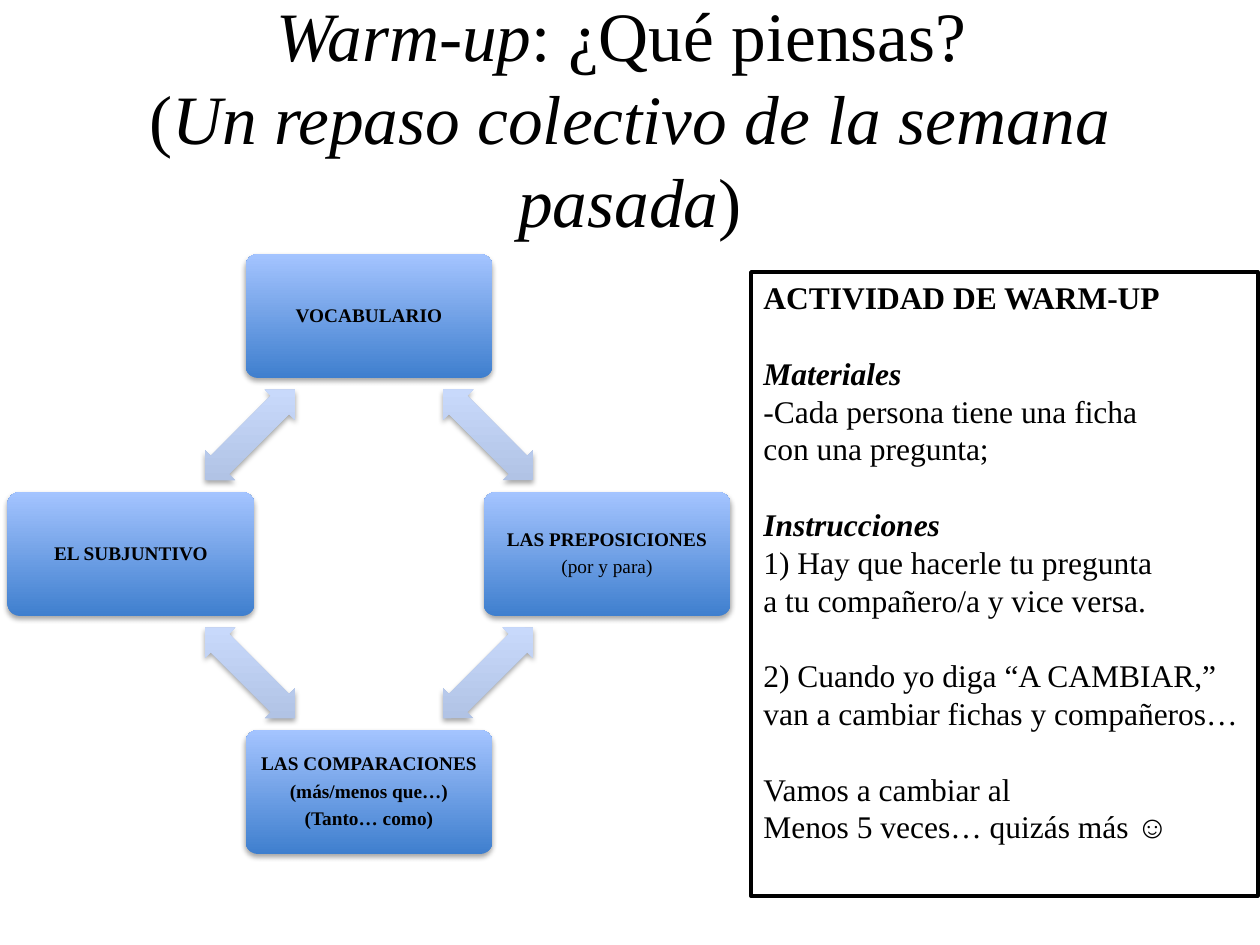
from dataclasses import dataclass

from lxml.etree import SubElement
from pptx import Presentation
from pptx.dml.color import RGBColor
from pptx.enum.shapes import MSO_SHAPE
from pptx.enum.text import MSO_ANCHOR, PP_ALIGN
from pptx.oxml.ns import qn
from pptx.util import Emu, Pt

EMU_PER_PX = 914400 / 126


@dataclass(frozen=True)
class Theme:
    font: str = "Times New Roman"
    ink: str = "000000"
    paper: str = "FFFFFF"
    card: tuple = ("3F7FCE", "A4C4FF")
    arrow: tuple = ("ADBFE1", "CCDDFF")
    title_size: float = 39.6
    card_size: float = 11
    activity_size: float = 18
    activity_gap: float = 21.6


THEME = Theme()

TITLE_LINES = [
    [("Warm-up", True), (": ¿Qué piensas? ", False)],
    [("(", False), ("Un repaso colectivo de la semana pasada", True), (")", False)],
]

CYCLE_CENTER = (369, 554)
CYCLE_RADIUS = 238
CARD_SIZE = (247, 124)
ARROW_SIZE = (128, 43)

TOPICS = [
    ((0, -1), [("VOCABULARIO", True)]),
    ((1, 0), [("LAS PREPOSICIONES", True), ("(por y para)", False)]),
    ((0, 1), [("LAS COMPARACIONES", True), ("(más/menos que…)", True),
              ("(Tanto… como)", True)]),
    ((-1, 0), [("EL SUBJUNTIVO", True)]),
]

ACTIVITY = [
    [("ACTIVIDAD DE WARM-UP", True, False)],
    [("Materiales", True, True),
     ("-Cada persona tiene una ficha", False, False),
     ("con una pregunta;", False, False)],
    [("Instrucciones", True, True),
     ("1) Hay que hacerle tu pregunta", False, False),
     ("a tu compañero/a y vice versa.", False, False)],
    [("2) Cuando yo diga “A CAMBIAR,”", False, False),
     ("van a cambiar fichas y compañeros…", False, False)],
    [("Vamos a cambiar al", False, False),
     ("Menos 5 veces… quizás más ☺", False, False)],
]


def px(length):
    return Emu(round(length * EMU_PER_PX))


def box(left, top, width, height):
    return px(left), px(top), px(width), px(height)


def centered_box(center, size):
    return box(center[0] - size[0] / 2, center[1] - size[1] / 2, *size)


def color(value):
    return RGBColor.from_string(value)


def format_run(run, size, bold=False, italic=False):
    font = run.font
    font.name = THEME.font
    font.size = Pt(size)
    font.color.rgb = color(THEME.ink)
    font.bold = bold
    font.italic = italic


def next_paragraph(text_frame, index):
    return text_frame.add_paragraph() if index else text_frame.paragraphs[0]


def add_shadow(shape):
    shape.shadow.inherit = False
    effects = shape.element.spPr.find(qn("a:effectLst"))
    shadow = SubElement(effects, qn("a:outerShdw"), blurRad="40000",
                        dist="23000", dir="5400000", rotWithShape="0")
    shadow_color = SubElement(shadow, qn("a:srgbClr"), val=THEME.ink)
    SubElement(shadow_color, qn("a:alpha"), val="35000")


def add_gradient_shape(slide, kind, center, size, colors):
    shape = slide.shapes.add_shape(kind, *centered_box(center, size))
    shape.fill.gradient()
    shape.fill.gradient_angle = 90
    for stop, value in zip(shape.fill.gradient_stops, colors):
        stop.color.rgb = color(value)
    shape.element.spPr.find(qn("a:gradFill")).set("rotWithShape", "0")
    shape.line.fill.background()
    add_shadow(shape)
    return shape


def add_title(slide):
    title = slide.shapes.add_textbox(*box(63, 38, 1134, 157))
    text_frame = title.text_frame
    text_frame.word_wrap = True
    text_frame.vertical_anchor = MSO_ANCHOR.MIDDLE
    paragraph = text_frame.paragraphs[0]
    paragraph.alignment = PP_ALIGN.CENTER
    for index, line in enumerate(TITLE_LINES):
        if index:
            paragraph.add_line_break()
        for text, italic in line:
            run = paragraph.add_run()
            run.text = text
            format_run(run, THEME.title_size, italic=italic)


def add_card(slide, center, lines):
    card = add_gradient_shape(slide, MSO_SHAPE.ROUNDED_RECTANGLE, center,
                              CARD_SIZE, THEME.card)
    card.adjustments[0] = 0.1
    text_frame = card.text_frame
    text_frame.word_wrap = True
    text_frame.vertical_anchor = MSO_ANCHOR.MIDDLE
    text_frame.margin_left = text_frame.margin_right = px(10)
    text_frame.margin_top = text_frame.margin_bottom = px(10)
    for index, (text, bold) in enumerate(lines):
        paragraph = next_paragraph(text_frame, index)
        paragraph.text = text
        paragraph.alignment = PP_ALIGN.CENTER
        paragraph.line_spacing = 0.9
        paragraph.space_after = Pt(THEME.card_size * 0.35)
        format_run(paragraph.runs[0], THEME.card_size, bold)


def add_arrow(slide, center, rotation):
    arrow = add_gradient_shape(slide, MSO_SHAPE.LEFT_RIGHT_ARROW, center,
                               ARROW_SIZE, THEME.arrow)
    arrow.adjustments[0] = 0.6
    arrow.adjustments[1] = 0.5
    arrow.rotation = rotation


def add_cycle(slide):
    centers = [tuple(middle + CYCLE_RADIUS * step
                     for middle, step in zip(CYCLE_CENTER, direction))
               for direction, _ in TOPICS]
    following = centers[1:] + centers[:1]
    for index, (start, end) in enumerate(zip(centers, following)):
        add_card(slide, start, TOPICS[index][1])
        midpoint = ((start[0] + end[0]) / 2, (start[1] + end[1]) / 2)
        add_arrow(slide, midpoint, 45 + 90 * index)


def add_activity(slide):
    panel = slide.shapes.add_shape(MSO_SHAPE.RECTANGLE, *box(751, 272, 507, 624))
    panel.shadow.inherit = False
    panel.fill.solid()
    panel.fill.fore_color.rgb = color(THEME.paper)
    panel.line.color.rgb = color(THEME.ink)
    panel.line.width = Pt(2)
    text_frame = panel.text_frame
    text_frame.word_wrap = True
    text_frame.vertical_anchor = MSO_ANCHOR.TOP
    lines = [(position, line) for section in ACTIVITY
             for position, line in enumerate(section)]
    for index, (position, (text, bold, italic)) in enumerate(lines):
        paragraph = next_paragraph(text_frame, index)
        paragraph.text = text
        paragraph.alignment = PP_ALIGN.LEFT
        if index and position == 0:
            paragraph.space_before = Pt(THEME.activity_gap)
        format_run(paragraph.runs[0], THEME.activity_size, bold, italic)


def main():
    presentation = Presentation()
    presentation.slide_width = px(1260)
    presentation.slide_height = px(945)
    slide = presentation.slides.add_slide(presentation.slide_layouts[6])
    add_title(slide)
    add_cycle(slide)
    add_activity(slide)
    presentation.save("out.pptx")


if __name__ == "__main__":
    main()
